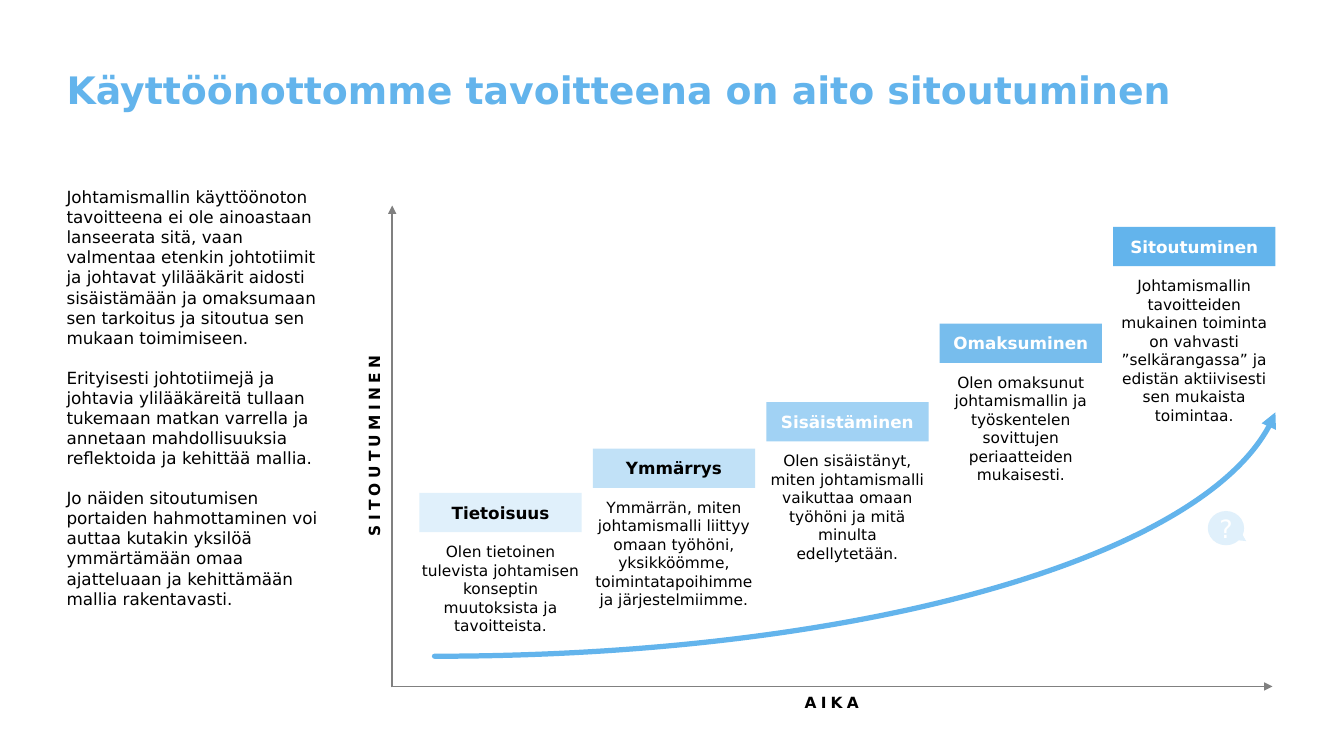
"""Build the slide on the five steps from awareness to commitment."""
from lxml import etree
from pptx import Presentation
from pptx.dml.color import RGBColor
from pptx.enum import shapes, text
from pptx.oxml import ns
from pptx.util import Inches, Pt

FONT = "DejaVu Sans"
BLUE = RGBColor(0x63, 0xB4, 0xEC)
PALE_BLUE = RGBColor(0xE0, 0xF0, 0xFB)
LIGHT_BLUE = RGBColor(0xC1, 0xE1, 0xF7)
SOFT_BLUE = RGBColor(0xA1, 0xD2, 0xF4)
MID_BLUE = RGBColor(0x77, 0xBD, 0xED)
GRAY = RGBColor(0x80, 0x80, 0x80)
BLACK = RGBColor(0, 0, 0)
WHITE = RGBColor(0xFF, 0xFF, 0xFF)
CENTER = text.PP_ALIGN.CENTER
MIDDLE = text.MSO_ANCHOR.MIDDLE
TOP = text.MSO_ANCHOR.TOP


def write(shape, paragraphs, size, color, bold=False, align=CENTER, anchor=TOP, gap=0, spacing=0):
    frame = shape.text_frame
    frame.word_wrap = True
    frame.vertical_anchor = anchor
    frame.margin_left = frame.margin_right = frame.margin_top = frame.margin_bottom = 0
    for index, words in enumerate(paragraphs):
        paragraph = frame.add_paragraph() if index else frame.paragraphs[0]
        paragraph.alignment = align
        if index:
            paragraph.space_before = Pt(gap)
        run = paragraph.add_run()
        run.text = words
        run.font.name = FONT
        run.font.size = Pt(size)
        run.font.bold = bold
        run.font.color.rgb = color
        if spacing:
            run.font._element.set("spc", str(spacing * 100))


def style_line(shape, color, width, arrow_end):
    shape.line.color.rgb = color
    shape.line.width = Pt(width)
    line = shape.line._get_or_add_ln()
    etree.SubElement(line, ns.qn(f"a:{arrow_end}"), type="triangle")
    etree.SubElement(shape._element.spPr, ns.qn("a:effectLst"))


presentation = Presentation()
presentation.slide_width = Inches(13.33)
presentation.slide_height = Inches(7.5)
slide = presentation.slides.add_slide(presentation.slide_layouts[5])

title = slide.shapes.title
title.left, title.top, title.width, title.height = map(Inches, (0.66, 0.66, 12.01, 0.66))
write(title, ["Käyttöönottomme tavoitteena on aito sitoutuminen"], 27, BLUE, True, text.PP_ALIGN.LEFT)

intro = slide.shapes.add_textbox(Inches(0.66), Inches(1.85), Inches(2.51), Inches(4.24))
write(intro, [
    "Johtamismallin käyttöönoton tavoitteena ei ole ainoastaan lanseerata sitä, vaan valmentaa "
    "etenkin johtotiimit ja johtavat ylilääkärit aidosti sisäistämään ja omaksumaan sen tarkoitus "
    "ja sitoutua sen mukaan toimimiseen.",
    "Erityisesti johtotiimejä ja johtavia ylilääkäreitä tullaan tukemaan matkan varrella ja "
    "annetaan mahdollisuuksia reflektoida ja kehittää mallia.",
    "Jo näiden sitoutumisen portaiden hahmottaminen voi auttaa kutakin yksilöä ymmärtämään omaa "
    "ajatteluaan ja kehittämään mallia rakentavasti.",
], 12, BLACK, align=text.PP_ALIGN.LEFT, gap=14)

axis_labels = [
    ("SITOUTUMINEN", 2.49, 4.3, 2.44, 270),
    ("AIKA", 7.38, 6.84, 1.74, 0),
]
for words, left, top, width, rotation in axis_labels:
    label = slide.shapes.add_textbox(Inches(left), Inches(top), Inches(width), Inches(0.25))
    label.rotation = rotation
    write(label, [words], 11, BLACK, True, anchor=MIDDLE, spacing=3)

curve_points = [(12.65, 4.09), (12.12, 5.47), (8.55, 6.51), (4.31, 6.51)]
start, *bends = [(Inches(x), Inches(y)) for x, y in curve_points]
builder = slide.shapes.build_freeform(*start)
builder.add_line_segments([bends[-1]], close=False)
curve = builder.convert_to_shape()
segment = curve._element.find(".//" + ns.qn("a:lnTo"))
bezier = etree.SubElement(segment.getparent(), ns.qn("a:cubicBezTo"))
for x, y in bends:
    etree.SubElement(bezier, ns.qn("a:pt"), x=str(x - curve.left), y=str(y - curve.top))
segment.getparent().remove(segment)
curve.fill.background()
style_line(curve, BLUE, 3.75, "headEnd")
curve.line._get_or_add_ln().set("cap", "rnd")

for ends in [(3.89, 6.82, 3.89, 2.04), (3.88, 6.81, 12.62, 6.81)]:
    axis = slide.shapes.add_connector(shapes.MSO_CONNECTOR.STRAIGHT, *map(Inches, ends))
    style_line(axis, GRAY, 1.25, "tailEnd")

steps = [
    ("Tietoisuus", 4.89, PALE_BLUE, BLACK, 0.98,
     "Olen tietoinen tulevista johtamisen konseptin muutoksista ja tavoitteista."),
    ("Ymmärrys", 4.45, LIGHT_BLUE, BLACK, 0.81,
     "Ymmärrän, miten johtamismalli liittyy omaan työhöni, yksikköömme, toimintatapoihimme "
     "ja järjestelmiimme."),
    ("Sisäistäminen", 3.99, SOFT_BLUE, WHITE, 0.83,
     "Olen sisäistänyt, miten johtamismalli vaikuttaa omaan työhöni ja mitä minulta edellytetään."),
    ("Omaksuminen", 3.21, MID_BLUE, WHITE, 1.16,
     "Olen omaksunut johtamismallin ja työskentelen sovittujen periaatteiden mukaisesti."),
    ("Sitoutuminen", 2.25, BLUE, WHITE, 1.33,
     "Johtamismallin tavoitteiden mukainen toiminta on vahvasti ”selkärangassa” ja edistän "
     "aktiivisesti sen mukaista toimintaa."),
]
for index, (name, top, fill, color, height, description) in enumerate(steps):
    left = Inches(4.16 + 1.72 * index)
    body = slide.shapes.add_textbox(left, Inches(top + 0.49), Inches(1.61), Inches(height))
    write(body, [description], 11, BLACK)
    heading = slide.shapes.add_shape(
        shapes.MSO_SHAPE.RECTANGLE, left, Inches(top), Inches(1.61), Inches(0.39))
    heading.shadow.inherit = False
    heading.fill.solid()
    heading.fill.fore_color.rgb = fill
    heading.line.fill.background()
    write(heading, [name], 12, color, True, anchor=MIDDLE)

question = slide.shapes.add_shape(
    shapes.MSO_SHAPE.OVAL_CALLOUT, Inches(11.98), Inches(5.07), Inches(0.36), Inches(0.34))
question.adjustments[0] = 0.555
question.adjustments[1] = 0.378
question.shadow.inherit = False
question.fill.solid()
question.fill.fore_color.rgb = PALE_BLUE
question.line.fill.background()
write(question, ["?"], 18, WHITE, anchor=MIDDLE)

presentation.save("out.pptx")
